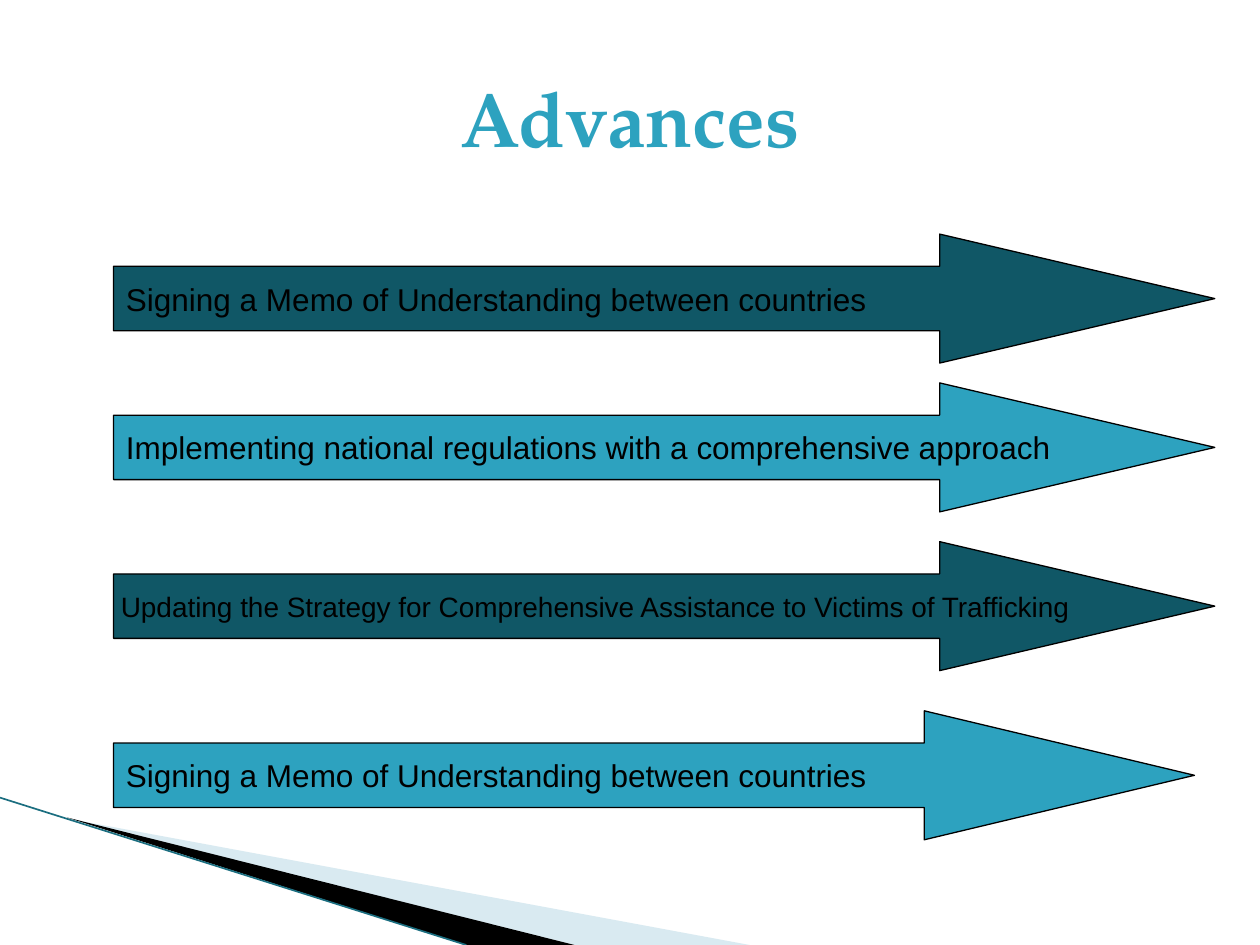
from lxml import etree
from pptx import Presentation
from pptx import util as u
from pptx.dml.color import RGBColor
from pptx.enum import shapes, text
from pptx.oxml.ns import qn

DARK_TEAL = RGBColor(0x10, 0x57, 0x66)
TEAL = RGBColor(0x2D, 0xA2, 0xBF)
PALE_BLUE = RGBColor(0xA0, 0xCB, 0xDC)
EDGE_TEAL = RGBColor(0x1B, 0x6E, 0x80)
BLACK = RGBColor(0, 0, 0)

LEFT, ALIGN_CENTER = text.PP_ALIGN.LEFT, text.PP_ALIGN.CENTER
MEMO = "Signing a Memo of Understanding between countries"
ARROWS = [
    (4.72, 22.2, 2.133, DARK_TEAL, MEMO, 18, LEFT),
    (7.72, 22.2, 2.133, TEAL,
     "Implementing national regulations with a comprehensive approach", 18, LEFT),
    (10.92, 22.2, 2.133, DARK_TEAL,
     "Updating the Strategy for Comprehensive Assistance to Victims of Trafficking",
     16, ALIGN_CENTER),
    (14.33, 21.79, 2.095, TEAL, MEMO, 18, LEFT),
]


def write_text(shape, words, size, font_name, color, alignment, bold=False):
    """Write one vertically centred paragraph into a shape."""
    frame = shape.text_frame
    frame.vertical_anchor = text.MSO_ANCHOR.MIDDLE
    paragraph = frame.paragraphs[0]
    paragraph.alignment = alignment
    run = paragraph.add_run()
    run.text = words
    run.font.size = u.Pt(size)
    run.font.name = font_name
    run.font.bold = bold
    run.font.color.rgb = color


def add_wedge(slide, points, color, opacity=100):
    """Draw a filled corner wedge through points given in centimetres."""
    corners = [(u.Cm(x), u.Cm(y)) for x, y in points]
    builder = slide.shapes.build_freeform(*corners[0])
    builder.add_line_segments(corners[1:], close=True)
    shape = builder.convert_to_shape()
    shape.shadow.inherit = False
    shape.fill.solid()
    shape.fill.fore_color.rgb = color
    shape.line.fill.background()
    if opacity < 100:
        fill_color = shape._element.spPr.find(qn("a:solidFill"))[0]
        etree.SubElement(fill_color, qn("a:alpha")).set("val", str(opacity * 1000))


def add_edge(slide):
    """Draw the thin line along the corner wedges."""
    edge = slide.shapes.add_connector(
        shapes.MSO_CONNECTOR.STRAIGHT, u.Cm(0), u.Cm(16.08), u.Cm(9.4), u.Cm(19.05))
    edge.line.color.rgb = EDGE_TEAL
    edge.line.width = u.Pt(0.95)
    etree.SubElement(edge._element.spPr, qn("a:effectLst"))


def add_title(slide, words):
    """Add the centred slide title."""
    title = slide.shapes.add_textbox(u.Cm(1.27), u.Cm(0.76), u.Cm(22.86), u.Cm(3.18))
    title.text_frame.word_wrap = True
    write_text(title, words, 44, "TeX Gyre Pagella", TEAL, ALIGN_CENTER, bold=True)


def add_arrow(slide, top, width, head, color, words, size, alignment):
    """Add a labelled right arrow."""
    arrow = slide.shapes.add_shape(
        shapes.MSO_SHAPE.RIGHT_ARROW, u.Cm(2.29), u.Cm(top), u.Cm(width), u.Cm(2.6))
    arrow.adjustments[0] = 0.5
    arrow.adjustments[1] = head
    arrow.shadow.inherit = False
    arrow.fill.solid()
    arrow.fill.fore_color.rgb = color
    arrow.line.color.rgb = BLACK
    arrow.line.width = u.Pt(0.75)
    arrow.text_frame.word_wrap = False
    write_text(arrow, words, size, "Arial", BLACK, alignment)


def main():
    """Build the Advances slide."""
    presentation = Presentation()
    presentation.slide_width = u.Cm(25.4)
    presentation.slide_height = u.Cm(19.05)
    slide = presentation.slides.add_slide(presentation.slide_layouts[6])
    add_wedge(slide, [(1.4, 16.51), (15.11, 19.05), (11.58, 19.05)], PALE_BLUE, 40)
    add_wedge(slide, [(1.35, 16.48), (11.58, 19.05), (9.4, 19.05)], BLACK)
    add_edge(slide)
    add_title(slide, "Advances")
    for arrow in ARROWS:
        add_arrow(slide, *arrow)
    presentation.save("out.pptx")


if __name__ == "__main__":
    main()
